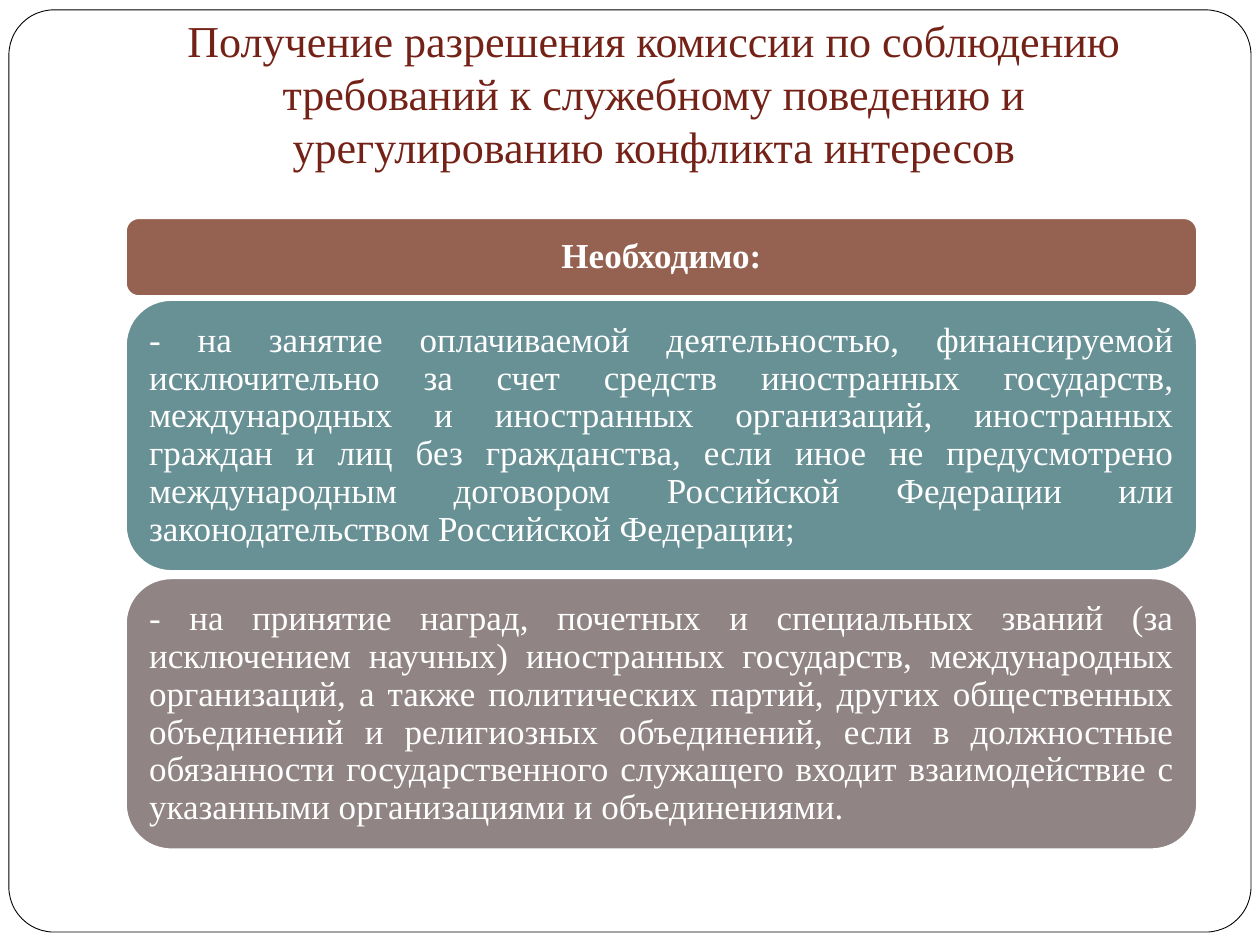
from pptx import Presentation
from pptx.dml.color import RGBColor
from pptx.enum.shapes import MSO_SHAPE
from pptx.enum.text import MSO_ANCHOR, PP_ALIGN
from pptx.util import Cm, Pt

ROUNDED = MSO_SHAPE.ROUNDED_RECTANGLE
CENTER, JUSTIFY = PP_ALIGN.CENTER, PP_ALIGN.JUSTIFY
MIDDLE, BOTTOM = MSO_ANCHOR.MIDDLE, MSO_ANCHOR.BOTTOM

WHITE = RGBColor(0xFF, 0xFF, 0xFF)
BLACK = RGBColor(0x00, 0x00, 0x00)
MAROON = RGBColor(0x74, 0x22, 0x17)
BROWN = RGBColor(0x95, 0x62, 0x51)
TEAL = RGBColor(0x68, 0x91, 0x95)
TAUPE = RGBColor(0x91, 0x84, 0x85)

TITLE = (
    "Получение разрешения комиссии по соблюдению требований "
    "к служебному поведению и урегулированию конфликта интересов"
)
HEADING = "Необходимо:"
PAID_WORK = (
    "- на занятие оплачиваемой деятельностью, финансируемой исключительно "
    "за счет средств иностранных государств, международных и иностранных "
    "организаций, иностранных граждан и лиц без гражданства, если иное не "
    "предусмотрено международным договором Российской Федерации или "
    "законодательством Российской Федерации;"
)
AWARDS = (
    "- на принятие наград, почетных и специальных званий (за исключением "
    "научных) иностранных государств, международных организаций, а также "
    "политических партий, других общественных объединений и религиозных "
    "объединений, если в должностные обязанности государственного служащего "
    "входит взаимодействие с указанными организациями и объединениями."
)


class SlideBuilder:
    """Holds the style and the current slide."""

    font_name = "Times New Roman"
    title_size = Pt(25.2)
    body_size = Pt(20)
    body_spacing = 0.9
    inset = Cm(0.2)
    title_inset = Cm(0.25)

    def __init__(self, slide):
        self.slide = slide

    def set_format(self, target, values):
        for name, value in values.items():
            setattr(target, name, value)

    def add_text(self, shape, text, frame, layout, font, color):
        text_frame = shape.text_frame
        self.set_format(text_frame, {"word_wrap": True, **frame})
        paragraph = text_frame.paragraphs[0]
        self.set_format(paragraph, layout)
        run = paragraph.add_run()
        run.text = text
        self.set_format(run.font, {"name": self.font_name, **font})
        run.font.color.rgb = color

    def panel(self, box, fill, line, line_width):
        shape = self.slide.shapes.add_shape(ROUNDED, *map(Cm, box))
        shape.shadow.inherit = False
        shape.fill.solid()
        shape.fill.fore_color.rgb = fill
        shape.line.color.rgb = line
        shape.line.width = Pt(line_width)
        return shape

    def frame(self, box, corner):
        self.panel(box, WHITE, BLACK, 0.5).adjustments[0] = corner

    def title(self, box, text):
        shape = self.slide.shapes.add_textbox(*map(Cm, box))
        frame = {"vertical_anchor": BOTTOM, "margin_bottom": self.title_inset}
        font = {"size": self.title_size}
        self.add_text(shape, text, frame, {"alignment": CENTER}, font, MAROON)

    def text_panel(self, box, text, fill, alignment, bold):
        shape = self.panel(box, fill, WHITE, 1)
        sides = ("left", "top", "right", "bottom")
        frame = {f"margin_{side}": self.inset for side in sides}
        frame["vertical_anchor"] = MIDDLE
        layout = {"alignment": alignment, "line_spacing": self.body_spacing}
        font = {"size": self.body_size, "bold": bold}
        self.add_text(shape, text, frame, layout, font, WHITE)


def main():
    presentation = Presentation()
    presentation.slide_width = Cm(25.4)
    presentation.slide_height = Cm(19.05)
    blank_layout = presentation.slide_layouts[6]
    builder = SlideBuilder(presentation.slides.add_slide(blank_layout))

    # Page frame and title
    builder.frame((0.18, 0.2, 25.04, 18.59), 0.049)
    builder.title((2.39, 1.19, 21.59, 2.54), TITLE)

    # Stacked panels: top, height, text, fill, alignment, bold
    panels = (
        (4.4, 1.57, HEADING, BROWN, CENTER, True),
        (6.05, 5.46, PAID_WORK, TEAL, JUSTIFY, False),
        (11.66, 5.46, AWARDS, TAUPE, JUSTIFY, False),
    )
    for top, height, *content in panels:
        builder.text_panel((2.54, top, 21.59, height), *content)

    presentation.save("out.pptx")


if __name__ == "__main__":
    main()
